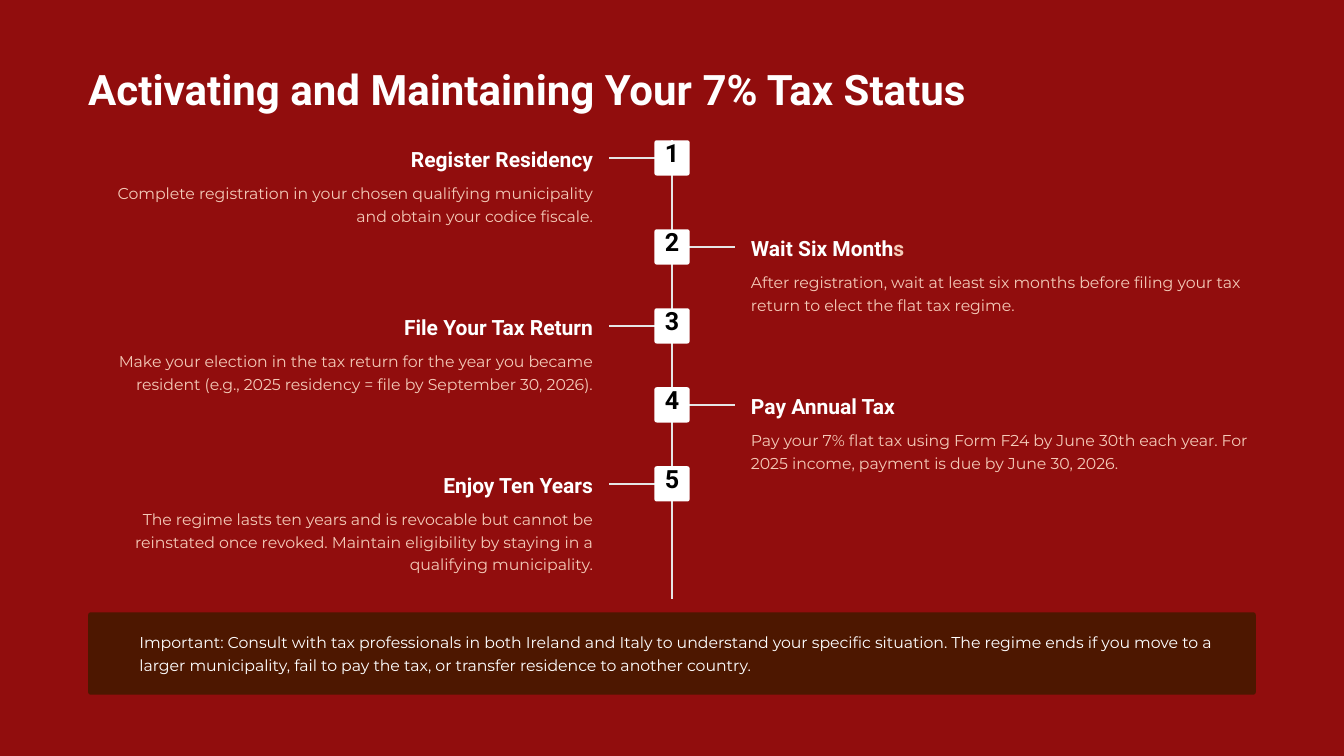
from pptx import Presentation
from pptx.dml.color import RGBColor
from pptx.enum.shapes import MSO_CONNECTOR, MSO_SHAPE
from pptx.enum.text import MSO_ANCHOR, MSO_AUTO_SIZE, PP_ALIGN
from pptx.oxml.ns import qn
from pptx.util import Inches, Pt
from lxml.etree import SubElement

TITLE = "Activating and Maintaining Your 7% Tax Status"
# Heading, tinted end of the heading, description
STEPS = [
    ("Register Residency", "",
     "Complete registration in your chosen qualifying municipality and obtain your codice fiscale."),
    ("Wait Six Month", "s",
     "After registration, wait at least six months before filing your tax return to elect the flat tax regime."),
    ("File Your Tax Return", "",
     "Make your election in the tax return for the year you became resident "
     "(e.g., 2025 residency = file by September 30, 2026)."),
    ("Pay Annual Tax", "",
     "Pay your 7% flat tax using Form F24 by June 30th each year. "
     "For 2025 income, payment is due by June 30, 2026."),
    ("Enjoy Ten Years", "",
     "The regime lasts ten years and is revocable but cannot be reinstated once revoked. "
     "Maintain eligibility by staying in a qualifying municipality."),
]
NOTICE = ("Important: Consult with tax professionals in both Ireland and Italy to understand your "
          "specific situation. The regime ends if you move to a larger municipality, fail to pay the "
          "tax, or transfer residence to another country.")

RED, BROWN, WHITE, BLACK = "910D0D", "4D1700", "FFFFFF", "000000"
PEACH, GREY = "F4CAB8", "E5E5E5"
HEAD_FONT, BODY_FONT = "Roboto", "Montserrat"

MARGIN, CENTER = 1.05, 8
SPINE_TOP, SPINE_BOTTOM = 1.67, 7.13
FIRST_GAP, STEP_GAP = 1.06, 0.94
BADGE = 0.42
SPOKE_START, SPOKE_END = 0.19, 0.75
TEXT_GAP, TEXT_WIDTH = 0.94, 6.01


def color(hex_code):
    return RGBColor.from_string(hex_code)


def write(shape, text, size, leading, font, hex_code, bold=False, align=PP_ALIGN.LEFT, top_inset=0):
    frame = shape.text_frame
    frame.text = text
    frame.word_wrap = True
    frame.auto_size = MSO_AUTO_SIZE.NONE
    frame.vertical_anchor = MSO_ANCHOR.TOP
    frame.margin_left = frame.margin_right = frame.margin_bottom = 0
    frame.margin_top = Inches(top_inset)
    paragraph = frame.paragraphs[0]
    paragraph.alignment = align
    paragraph.line_spacing = Pt(leading)
    style(paragraph.runs[0], size, font, hex_code, bold)
    return paragraph


def style(run, size, font, hex_code, bold):
    run.font.size = Pt(size)
    run.font.name = font
    run.font.bold = bold
    run.font.color.rgb = color(hex_code)


def add_text(left, top, width, height, *args, **kwargs):
    box = slide.shapes.add_textbox(Inches(left), Inches(top), Inches(width), Inches(height))
    return write(box, *args, **kwargs)


def add_panel(left, top, width, height, fill, rounding):
    panel = slide.shapes.add_shape(MSO_SHAPE.ROUNDED_RECTANGLE, Inches(left), Inches(top),
                                   Inches(width), Inches(height))
    panel.adjustments[0] = rounding
    panel.shadow.inherit = False
    panel.fill.solid()
    panel.fill.fore_color.rgb = color(fill)
    panel.line.fill.background()
    return panel


def add_line(x1, y1, x2, y2):
    line = slide.shapes.add_connector(MSO_CONNECTOR.STRAIGHT, Inches(x1), Inches(y1),
                                      Inches(x2), Inches(y2))
    line.line.color.rgb = color(GREY)
    line.line.width = Inches(0.03)
    SubElement(line._element.spPr, qn("a:effectLst"))


def add_step(number, top, heading, tinted_end, description):
    on_left = number % 2 == 1
    side = -1 if on_left else 1
    align = PP_ALIGN.RIGHT if on_left else PP_ALIGN.LEFT
    text_left = CENTER - TEXT_GAP - TEXT_WIDTH if on_left else CENTER + TEXT_GAP

    spoke_y = top + BADGE / 2
    add_line(CENTER + side * SPOKE_START, spoke_y, CENTER + side * SPOKE_END, spoke_y)
    badge = add_panel(CENTER - BADGE / 2, top, BADGE, BADGE, WHITE, 0.07)
    write(badge, str(number), 21.5, 21.5, HEAD_FONT, BLACK, True, PP_ALIGN.CENTER, 0.02)

    title = add_text(text_left, top + 0.06, TEXT_WIDTH, 0.31,
                     heading, 18, 22.5, HEAD_FONT, WHITE, True, align)
    if tinted_end:
        run = title.add_run()
        run.text = tinted_end
        style(run, 18, HEAD_FONT, PEACH, True)
    add_text(text_left, top + 0.47, TEXT_WIDTH, 0.82,
             description, 13.5, 19.5, BODY_FONT, PEACH, align=align)


prs = Presentation()
prs.slide_width, prs.slide_height = Inches(16), Inches(9)
slide = prs.slides.add_slide(prs.slide_layouts[5])
slide.background.fill.solid()
slide.background.fill.fore_color.rgb = color(RED)

title = slide.shapes.title
title.left, title.top = Inches(MARGIN), Inches(0.73)
title.width, title.height = Inches(13.9), Inches(0.63)
write(title, TITLE, 36, 45, HEAD_FONT, WHITE, True)

add_line(CENTER, SPINE_TOP, CENTER, SPINE_BOTTOM)
for index, step in enumerate(STEPS):
    top = SPINE_TOP + (FIRST_GAP + (index - 1) * STEP_GAP if index else 0)
    add_step(index + 1, top, *step)

add_panel(MARGIN, 7.29, 13.9, 0.98, BROWN, 0.03)
add_text(1.66, 7.49, 13.1, 0.55, NOTICE, 13.5, 19.5, BODY_FONT, WHITE)

prs.save("out.pptx")
